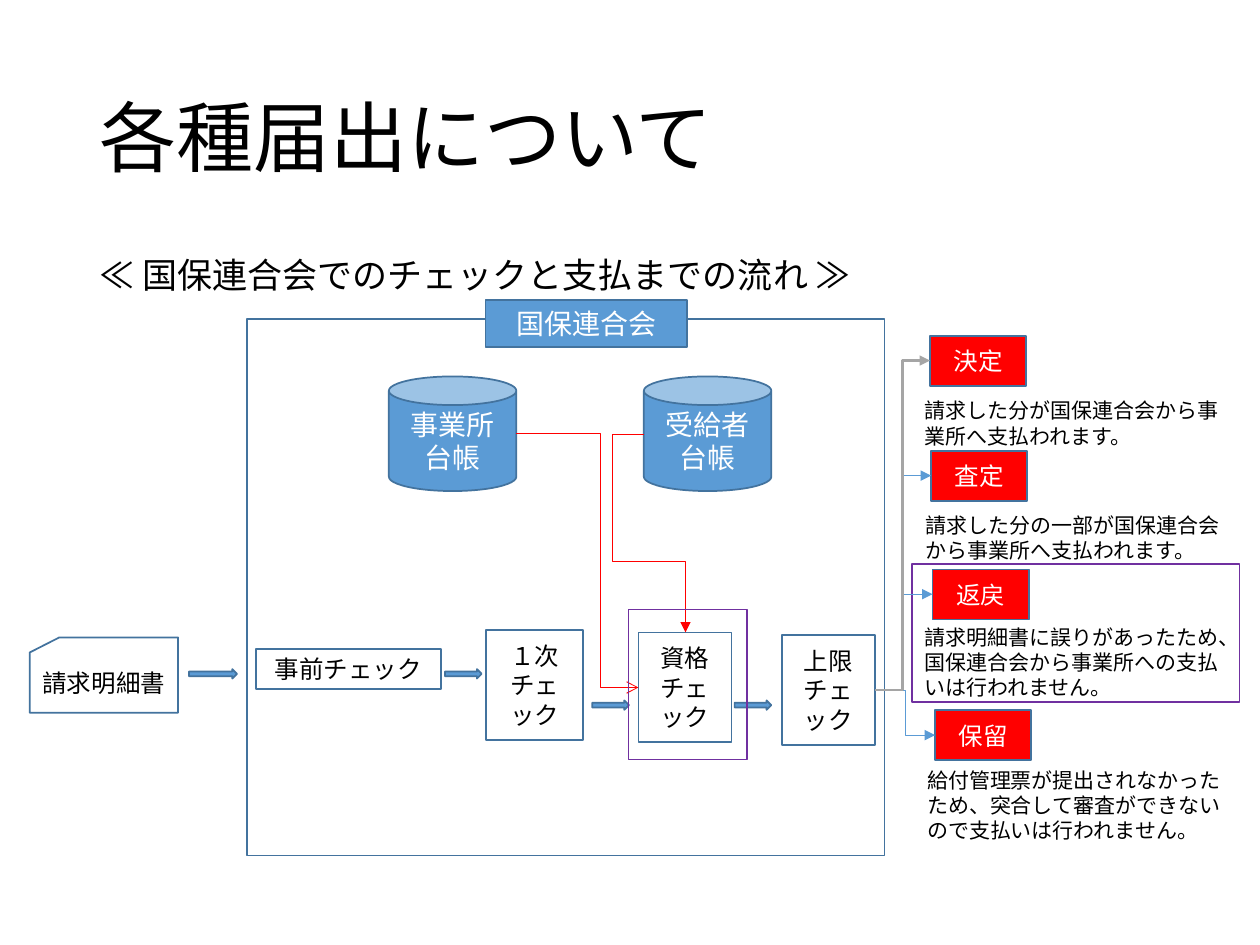
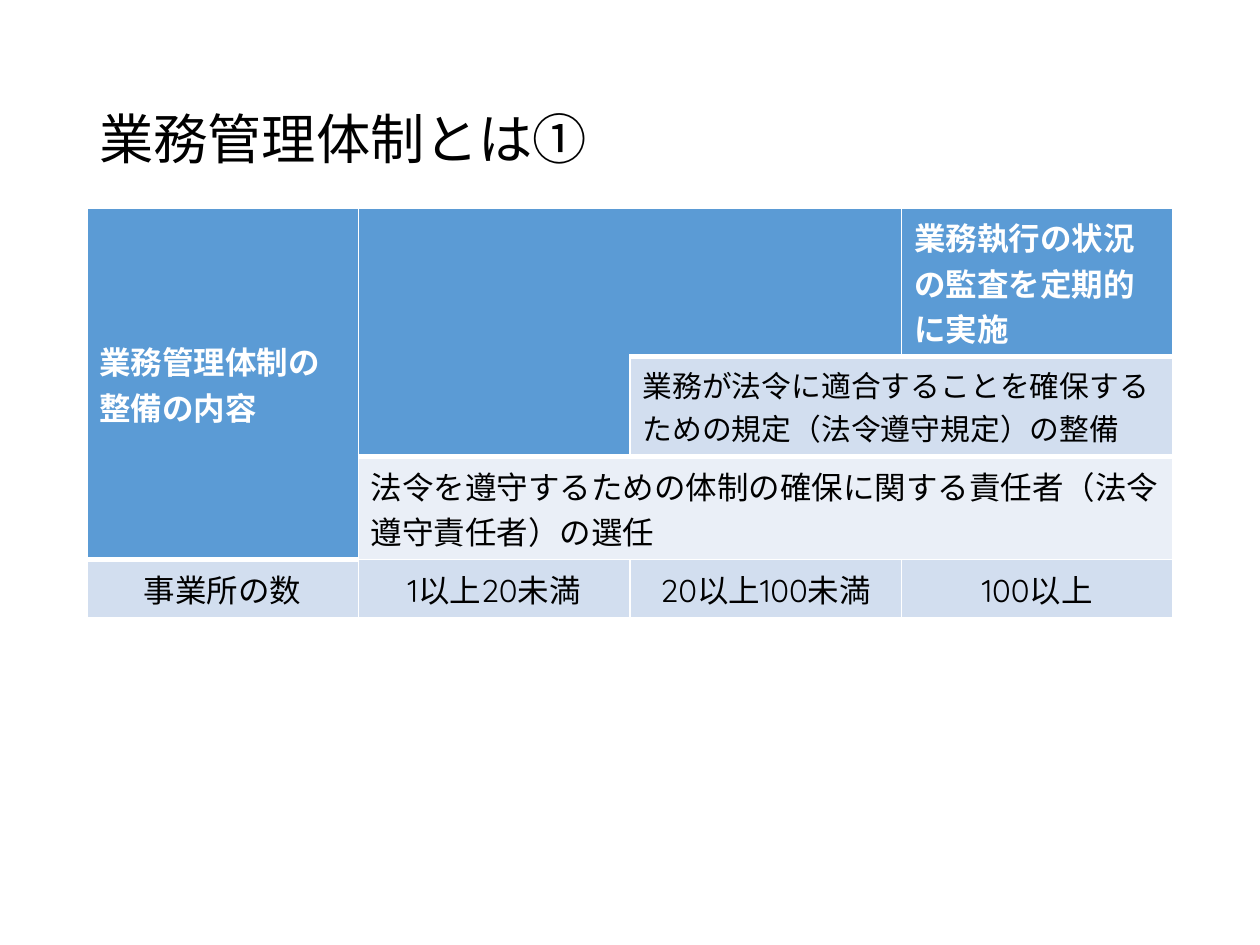
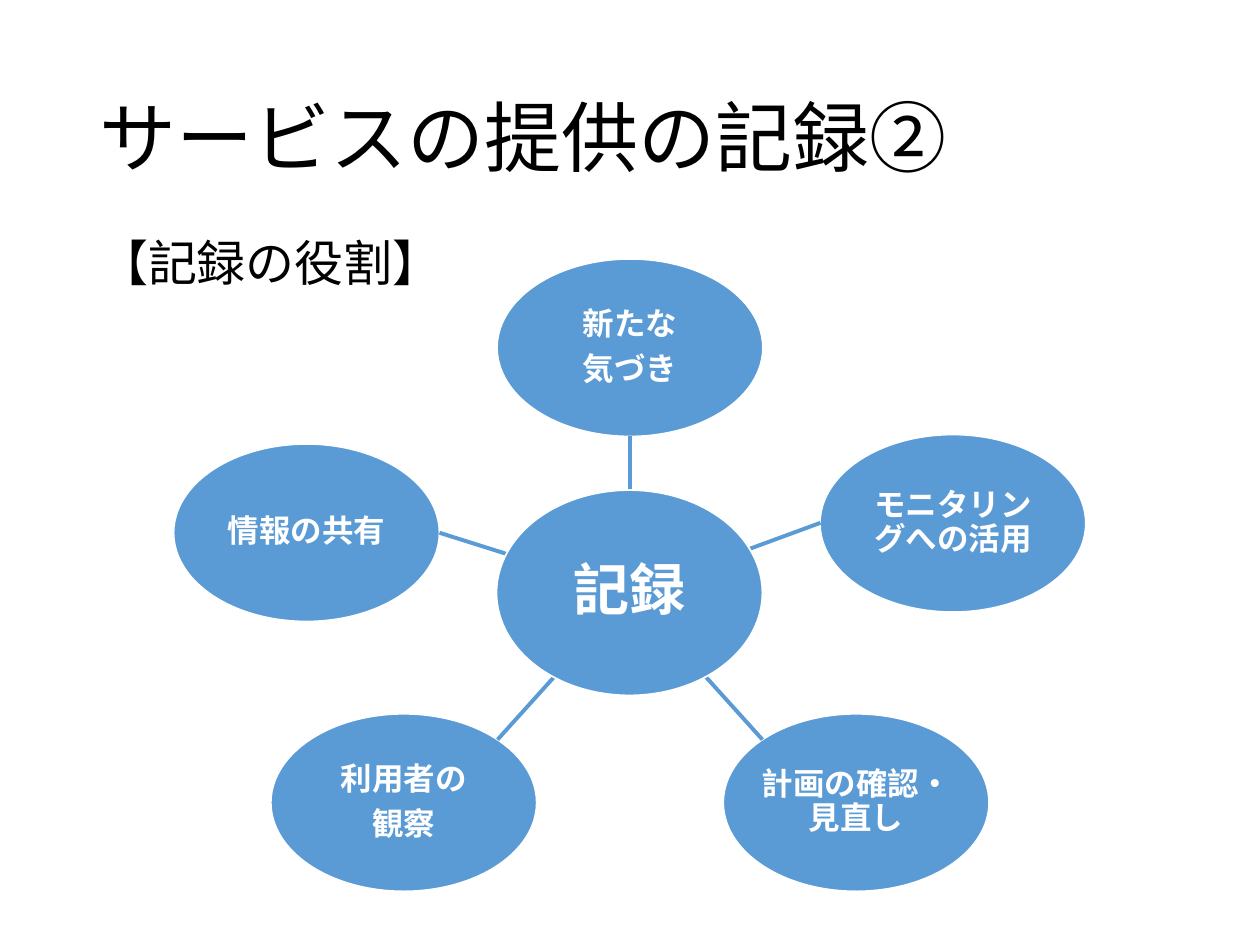
from lxml import etree
from pptx import Presentation
from pptx import util as u
from pptx.dml.color import RGBColor
from pptx.enum import shapes, text
from pptx.oxml import ns

COLORS = {
    "blue": "5B9BD5", "edge": "43739E", "red": "FF0000", "purple": "7030A0",
    "gray": "A5A5A5", "black": "000000", "white": "FFFFFF",
    "band": "D2DEEF", "pale": "EAEFF7",
}
COLORS = {name: RGBColor.from_string(value) for name, value in COLORS.items()}
FONT = "Quicksand"
TITLE = (1.75, 1.02, 21.9, 3.68)
PRESET = shapes.MSO_SHAPE
ANCHOR = text.MSO_ANCHOR
ALIGN = text.PP_ALIGN


def place(slide, at, words="", size=14, color="black", preset=None, fill=None, edge="edge",
          anchor=ANCHOR.MIDDLE, align=None, bold=False, spacing=None, before=0, after=0,
          inset=None, wrap=True):
    at = [u.Cm(value) for value in at]
    if preset is None:
        item = slide.shapes.add_textbox(*at)
    else:
        item = slide.shapes.add_shape(preset, *at)
        item.shadow.inherit = False
        item.line.color.rgb = COLORS[edge]
        item.line.width = u.Pt(1)
        if fill:
            item.fill.solid()
            item.fill.fore_color.rgb = COLORS[fill]
        else:
            item.fill.background()
        align = ALIGN.CENTER
    frame = item.text_frame
    frame.word_wrap = wrap
    frame.vertical_anchor = anchor
    if inset is not None:
        frame.margin_left = frame.margin_right = frame.margin_top = frame.margin_bottom = u.Cm(inset)
    if words:
        frame.text = words
        for paragraph in frame.paragraphs:
            paragraph.alignment = align
            paragraph.line_spacing = spacing
            paragraph.space_before = u.Pt(before)
            paragraph.space_after = u.Pt(after)
            paragraph.font.name = FONT
            paragraph.font.size = u.Pt(size)
            paragraph.font.bold = bold
            paragraph.font.color.rgb = COLORS[color]


def link(slide, start, end, color, width, head=None, bends=(), preset=None):
    kind = shapes.MSO_CONNECTOR.ELBOW if head else shapes.MSO_CONNECTOR.STRAIGHT
    line = slide.shapes.add_connector(kind, *[u.Cm(value) for value in (*start, *end)])
    line.line.color.rgb = COLORS[color]
    line.line.width = u.Pt(width)
    properties = line._element.spPr
    if head:
        etree.SubElement(line.line._ln, ns.qn("a:tailEnd"), type=head)
    geometry = properties.find(ns.qn("a:prstGeom"))
    if preset:
        geometry.set("prst", preset)
    for number, bend in enumerate(bends, 1):
        etree.SubElement(geometry.find(ns.qn("a:avLst")), ns.qn("a:gd"),
                         name=f"adj{number}", fmla=f"val {round(bend * 100000)}")
    etree.SubElement(properties, ns.qn("a:effectLst"))


deck = Presentation()
deck.slide_width, deck.slide_height = u.Cm(25.4), u.Cm(19.05)
flow, system, records = [deck.slides.add_slide(deck.slide_layouts[6]) for _ in range(3)]
for slide, heading, size in (
    (flow, "各種届出について", 44),
    (system, "業務管理体制とは①", 31),
    (records, "サービスの提供の記録②", 44),
):
    place(slide, TITLE, heading, size, spacing=0.9)

place(flow, (1.75, 5.08, 21.9, 12.09), "≪ 国保連合会でのチェックと支払までの流れ ≫", 20,
      anchor=ANCHOR.TOP, spacing=0.9, before=10)
for left, ledger in ((7.84, "事業所台帳"), (12.98, "受給者台帳")):
    place(flow, (left, 7.59, 2.57, 2.31), ledger, 16, "white", PRESET.CAN, "blue")
for at, check in (
    ((5.16, 13.08, 3.73, 0.81), "事前チェック"),
    ((9.8, 12.7, 1.96, 2.22), "１次チェック"),
    ((12.87, 12.75, 1.88, 2.21), "資格チェック"),
    ((15.76, 12.8, 1.88, 2.22), "上限チェック"),
):
    place(flow, at, check, preset=PRESET.RECTANGLE)
place(flow, (0.6, 12.85, 2.99, 1.52), "請求明細書", preset=PRESET.FLOWCHART_CARD)
for left, top, width in ((3.81, 13.49, 0.97), (8.97, 13.49, 0.74), (11.94, 14.12, 0.74), (14.81, 14.12, 0.74)):
    place(flow, (left, top, width, 0.19), preset=PRESET.RIGHT_ARROW, fill="blue")
link(flow, (10.41, 8.74), (12.87, 13.86), "red", 0.5, "arrow", [0.69])
link(flow, (12.98, 8.76), (13.82, 12.75), "red", 0.5, "triangle", [-0.76, 0.64], "bentConnector4")

for focus in ((12.67, 12.29, 2.39, 3.02), (18.39, 11.37, 6.6, 2.79)):
    place(flow, focus, preset=PRESET.RECTANGLE, edge="purple")
place(flow, (4.98, 6.43, 12.85, 10.82), preset=PRESET.RECTANGLE)
place(flow, (9.79, 6.05, 4.06, 0.94), "国保連合会", 16, "white", PRESET.RECTANGLE, "blue")

outcomes = [
    ("保留", 18.85, 14.32, 18.44, 15.48, "blue", 0.5,
     "給付管理票が提出されなかった ため、突合して審査ができないので支払いは行われません。"),
    ("返戻", 18.8, 11.48, 18.39, 12.6, "blue", 0.5,
     "請求明細書に誤りがあったため、国保連合会から事業所への支払いは行われません。"),
    ("査定", 18.77, 9.09, 18.41, 10.09, "blue", 0.5,
     "請求した分の一部が国保連合会から事業所へ支払われます。"),
    ("決定", 18.75, 6.77, 18.39, 7.78, "gray", 1.5,
     "請求した分が国保連合会から事業所へ支払われます。"),
]
for outcome, left, top, note_left, note_top, color, width, note in outcomes:
    place(flow, (left, top, 1.94, 1.01), outcome, 14, "white", PRESET.RECTANGLE, "red")
    place(flow, (note_left, note_top, 6.6, 1.5), note, 12)
    link(flow, (17.64, 13.91), (left, top + 0.5), color, width, "triangle")

duties = system.shapes.add_table(4, 4, u.Cm(1.75), u.Cm(4.19), u.Cm(21.9), u.Cm(8.27)).table
for row, height in zip(duties.rows, (3, 2.01, 2.08, 1.18)):
    row.height = u.Cm(height)
wording = {
    (0, 0): "業務管理体制の整備の内容",
    (0, 3): "業務執行の状況の監査を定期的に実施",
    (1, 2): "業務が法令に適合することを確保するための規定（法令遵守規定）の整備",
    (2, 1): "法令を遵守するための体制の確保に関する責任者（法令遵守責任者）の選任",
    (3, 0): "事業所の数",
    (3, 1): "1以上20未満",
    (3, 2): "20以上100未満",
    (3, 3): "100以上",
}
header_depth = (3, 2, 1, 1)
for r in range(4):
    for c in range(4):
        cell = duties.cell(r, c)
        header = r < header_depth[c]
        borders = {
            "lnL": 0 if (r, c) == (0, 2) else 1,
            "lnR": 0 if (r, c) == (0, 1) else 1,
            "lnT": 3 if r == header_depth[c] else 1,
            "lnB": 3 if header else 1,
        }
        for side, width in borders.items():
            border = etree.SubElement(cell._tc.get_or_add_tcPr(), ns.qn(f"a:{side}"), w=str(u.Pt(width)))
            if width:
                paint = etree.SubElement(border, ns.qn("a:solidFill"))
                etree.SubElement(paint, ns.qn("a:srgbClr"), val=str(COLORS["white"]))
            else:
                etree.SubElement(border, ns.qn("a:noFill"))
        cell.fill.solid()
        cell.fill.fore_color.rgb = COLORS["blue" if header else "pale" if r == 2 else "band"]
        if (r, c) in wording:
            cell.text = wording[r, c]
            paragraph = cell.text_frame.paragraphs[0]
            paragraph.alignment = ALIGN.CENTER if r == 3 else None
            paragraph.font.name = FONT
            paragraph.font.size = u.Pt(17 if r == 1 else 18)
            paragraph.font.bold = header
            paragraph.font.color.rgb = COLORS["white" if header else "black"]
duties.cell(0, 0).vertical_anchor = ANCHOR.MIDDLE
for first, last in (((0, 0), (2, 0)), ((0, 1), (1, 1)), ((1, 2), (1, 3)), ((2, 1), (2, 3))):
    duties.cell(*first).merge(duties.cell(*last))

place(records, (1.75, 4.7, 21.9, 13.26), "【記録の役割】", 28, anchor=ANCHOR.TOP,
      align=ALIGN.JUSTIFY, spacing=0.9, before=10)
roles = [
    ("モニタリン\vグへの活用", (16.53, 8.76), (16.54, 10.54)),
    ("新たな\n気づき", (10.02, 5.22), (12.7, 8.79)),
    ("計画の確認・\v見直し", (14.58, 14.39), (15.37, 14.91)),
    ("利用者の\n観察", (5.46, 14.39), (10.03, 14.91)),
    ("情報の共有", (3.5, 8.95), (8.86, 10.74)),
]
bubble = dict(color="white", preset=PRESET.OVAL, fill="blue", edge="white", bold=True,
              spacing=0.9, inset=0.03, wrap=False)
for role, corner, contact in roles:
    place(records, (*corner, 5.36, 3.58), role, 18, after=6.3, **bubble)
    link(records, (12.7, 11.95), contact, "blue", 2.25)
place(records, (10.01, 9.88, 5.36, 4.14), "記録", 32, after=11.2, **bubble)

deck.save("out.pptx")
